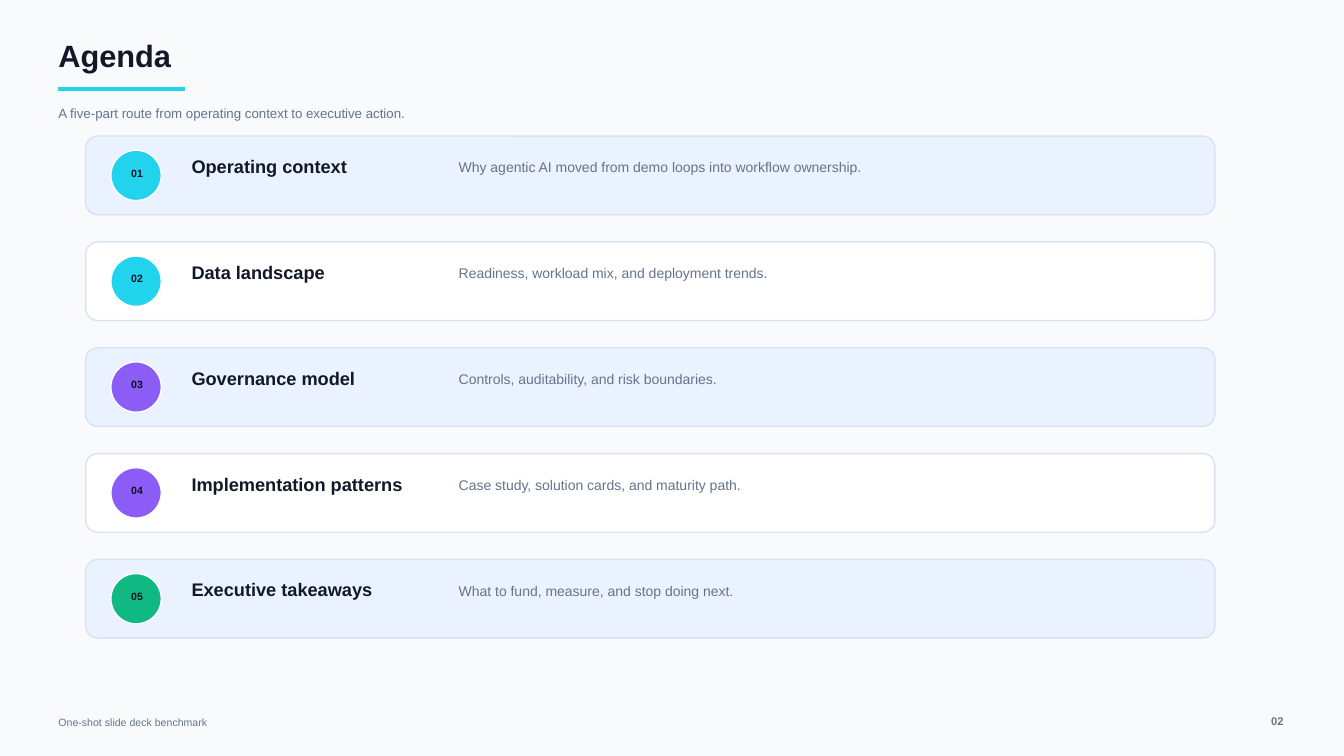
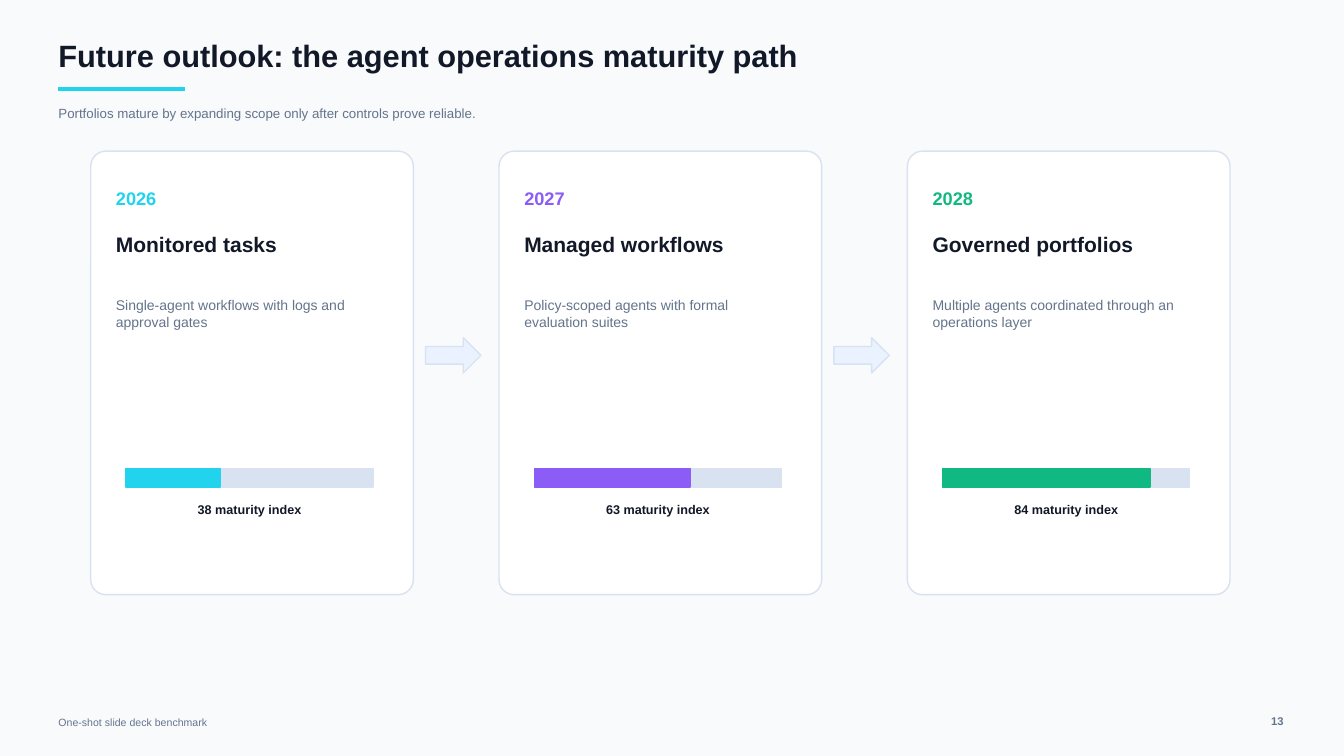
from dataclasses import dataclass

from lxml import etree
from pptx import Presentation
from pptx.dml.color import RGBColor
from pptx.enum.shapes import MSO_CONNECTOR, MSO_SHAPE
from pptx.enum.text import MSO_ANCHOR, PP_ALIGN
from pptx.oxml.ns import qn
from pptx.util import Inches, Pt

ROUNDED = MSO_SHAPE.ROUNDED_RECTANGLE
RECT = MSO_SHAPE.RECTANGLE
OVAL = MSO_SHAPE.OVAL
ARROW = MSO_SHAPE.RIGHT_ARROW
STRAIGHT = MSO_CONNECTOR.STRAIGHT
MIDDLE = MSO_ANCHOR.MIDDLE
LEFT, CENTER, RIGHT = PP_ALIGN.LEFT, PP_ALIGN.CENTER, PP_ALIGN.RIGHT


@dataclass(frozen=True)
class Theme:
    font: str = "Arial"
    page: str = "F8FAFC"
    ink: str = "111827"
    badge_ink: str = "0B1020"
    muted: str = "64748B"
    white: str = "FFFFFF"
    tint: str = "EAF2FF"
    border: str = "D8E2F0"
    cyan: str = "22D3EE"
    violet: str = "8B5CF6"
    green: str = "10B981"
    title: float = 22
    card_title: float = 15
    heading: float = 13
    body: float = 10
    subtitle: float = 9.5
    label: float = 9
    page_number: float = 8
    small: float = 7.5
    rule: float = 3
    outline: float = 1


THEME = Theme()
MARGIN = 0.58
FOOTER = "One-shot slide deck benchmark"

AGENDA = [
    ("Operating context", "Why agentic AI moved from demo loops into workflow ownership.", THEME.cyan),
    ("Data landscape", "Readiness, workload mix, and deployment trends.", THEME.cyan),
    ("Governance model", "Controls, auditability, and risk boundaries.", THEME.violet),
    ("Implementation patterns", "Case study, solution cards, and maturity path.", THEME.violet),
    ("Executive takeaways", "What to fund, measure, and stop doing next.", THEME.green),
]

STAGES = [
    ("2026", "Monitored tasks", "Single-agent workflows with logs and approval gates", 38, THEME.cyan),
    ("2027", "Managed workflows", "Policy-scoped agents with formal evaluation suites", 63, THEME.violet),
    ("2028", "Governed portfolios", "Multiple agents coordinated through an operations layer", 84, THEME.green),
]


def rgb(value):
    return RGBColor.from_string(value)


def set_attrs(target, values):
    for name, value in values.items():
        setattr(target, name, value)


def add_text(s, text, x, y, w, h, size, color, bold=False, align=LEFT):
    tf = s.shapes.add_textbox(Inches(x), Inches(y), Inches(w), Inches(h)).text_frame
    set_attrs(tf, {
        "word_wrap": True,
        "vertical_anchor": MIDDLE,
        "margin_left": 0,
        "margin_top": 0,
        "margin_right": 0,
        "margin_bottom": 0,
    })
    p = tf.paragraphs[0]
    p.alignment = align
    r = p.add_run()
    r.text = text
    set_attrs(r.font, {"name": THEME.font, "size": Pt(size), "bold": bold})
    r.font.color.rgb = rgb(color)


def add_box(s, kind, x, y, w, h, fill, line, radius=None):
    sp = s.shapes.add_shape(kind, Inches(x), Inches(y), Inches(w), Inches(h))
    sp.shadow.inherit = False
    sp.fill.solid()
    sp.fill.fore_color.rgb = rgb(fill)
    sp.line.color.rgb = rgb(line)
    sp.line.width = Pt(THEME.outline)
    if radius is not None:
        sp.adjustments[0] = radius / min(w, h)


def add_rule(s, x, y, w):
    rule = s.shapes.add_connector(STRAIGHT, Inches(x), Inches(y), Inches(x + w), Inches(y))
    rule.line.color.rgb = rgb(THEME.cyan)
    rule.line.width = Pt(THEME.rule)
    etree.SubElement(rule._element.spPr, qn("a:effectLst"))


def add_slide(prs, title, subtitle, number):
    s = prs.slides.add_slide(prs.slide_layouts[6])
    s.background.fill.solid()
    s.background.fill.fore_color.rgb = rgb(THEME.page)
    add_text(s, title, MARGIN, 0.35, 8.8, 0.4, THEME.title, THEME.ink, bold=True)
    add_rule(s, MARGIN, 0.88, 1.25)
    add_text(s, subtitle, MARGIN, 0.98, 8.5, 0.28, THEME.subtitle, THEME.muted)
    add_text(s, FOOTER, MARGIN, 7.08, 3.1, 0.18, THEME.small, THEME.muted)
    add_text(s, f"{number:02d}", 12.08, 7.05, 0.65, 0.2, THEME.page_number, THEME.muted,
             bold=True, align=RIGHT)
    return s


def add_agenda_row(s, y, number, heading, detail, accent):
    fill = THEME.tint if number % 2 else THEME.white
    add_box(s, ROUNDED, 0.85, y, 11.2, 0.78, fill, THEME.border, radius=0.12)
    add_box(s, OVAL, 1.1, y + 0.14, 0.5, 0.5, accent, THEME.white)
    add_text(s, f"{number:02d}", 1.2, y + 0.29, 0.32, 0.15, THEME.small, THEME.badge_ink,
             bold=True, align=CENTER)
    add_text(s, heading, 1.9, y + 0.18, 2.6, 0.24, THEME.heading, THEME.ink, bold=True)
    add_text(s, detail, 4.55, y + 0.2, 6.7, 0.22, THEME.body, THEME.muted)


def add_progress(s, x, y, value, accent):
    width, height = 2.45, 0.18
    add_box(s, RECT, x, y, width, height, THEME.border, THEME.border)
    add_box(s, RECT, x, y, width * value / 100, height, accent, accent)
    add_text(s, f"{value} maturity index", x, y + 0.3, width, 0.2, THEME.label, THEME.ink,
             bold=True, align=CENTER)


def add_stage_card(s, x, year, heading, detail, value, accent):
    add_box(s, ROUNDED, x, 1.5, 3.2, 4.4, THEME.white, THEME.border, radius=0.15)
    text_x = x + 0.25
    add_text(s, year, text_x, 1.85, 0.8, 0.24, THEME.heading, accent, bold=True)
    add_text(s, heading, text_x, 2.25, 2.5, 0.34, THEME.card_title, THEME.ink, bold=True)
    add_text(s, detail, text_x, 2.78, 2.55, 0.65, THEME.body, THEME.muted)
    add_progress(s, x + 0.35, 4.65, value, accent)


def build_agenda(prs):
    s = add_slide(prs, "Agenda", "A five-part route from operating context to executive action.", 2)
    for i, item in enumerate(AGENDA):
        add_agenda_row(s, 1.35 + i * 1.05, i + 1, *item)


def build_outlook(prs):
    s = add_slide(prs, "Future outlook: the agent operations maturity path",
                  "Portfolios mature by expanding scope only after controls prove reliable.", 13)
    for i, stage in enumerate(STAGES):
        x = 0.9 + i * 4.05
        add_stage_card(s, x, *stage)
        if i < len(STAGES) - 1:
            add_box(s, ARROW, x + 3.32, 3.35, 0.55, 0.35, THEME.tint, THEME.border)


def main():
    prs = Presentation()
    set_attrs(prs, {"slide_width": Inches(13.33), "slide_height": Inches(7.5)})
    build_agenda(prs)
    build_outlook(prs)
    prs.save("out.pptx")


if __name__ == "__main__":
    main()
